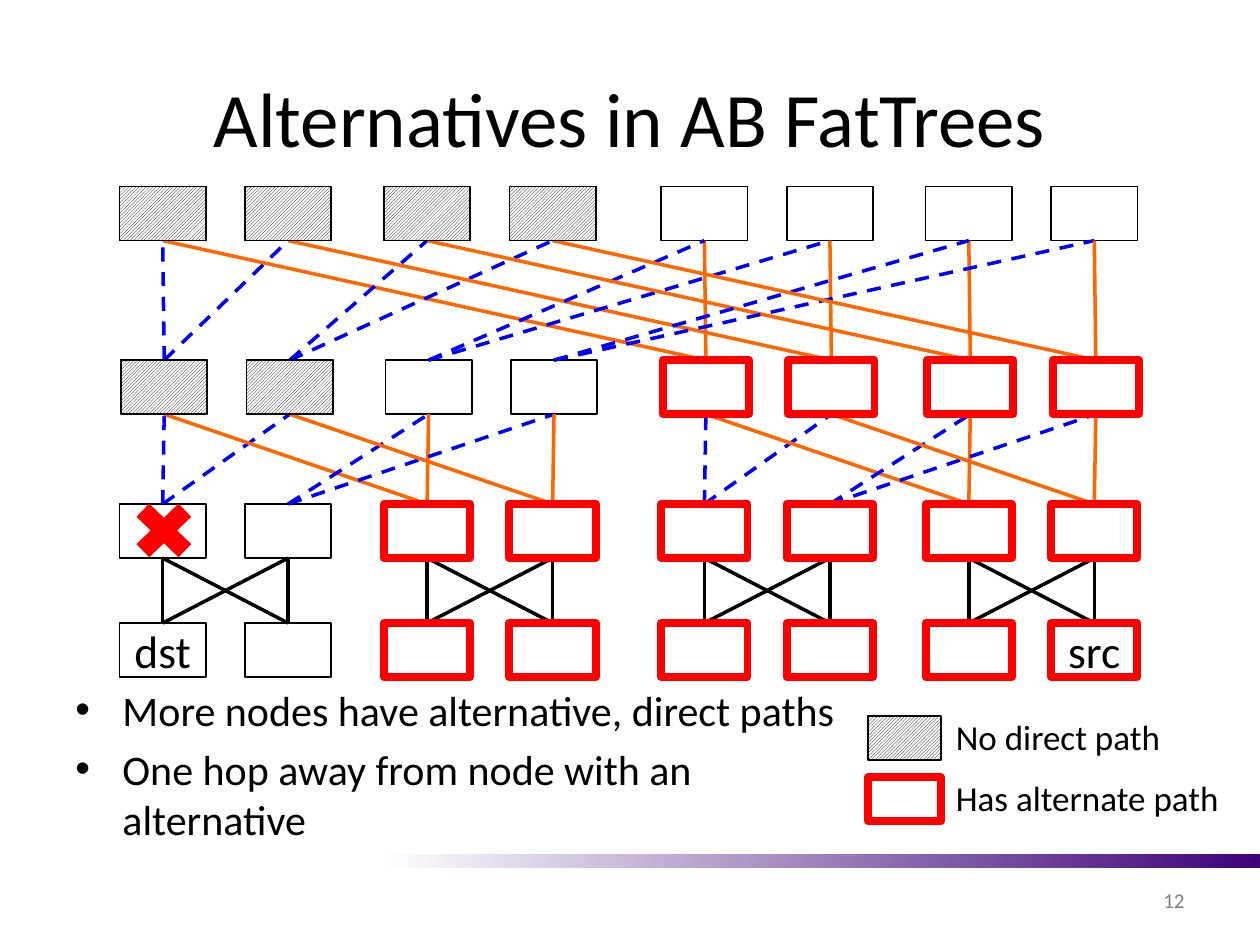
from lxml import etree
from pptx import Presentation
from pptx.dml.color import RGBColor
from pptx.enum.dml import MSO_LINE, MSO_PATTERN
from pptx.enum.shapes import MSO_CONNECTOR, MSO_SHAPE
from pptx.enum.text import MSO_ANCHOR, PP_ALIGN
from pptx.oxml.ns import qn
from pptx.util import Cm, Pt

RECTANGLE, CROSS = MSO_SHAPE.RECTANGLE, MSO_SHAPE.MATH_MULTIPLY
STRAIGHT, DASH = MSO_CONNECTOR.STRAIGHT, MSO_LINE.DASH
HATCH = MSO_PATTERN.LIGHT_UPWARD_DIAGONAL
TOP, MIDDLE = MSO_ANCHOR.TOP, MSO_ANCHOR.MIDDLE
LEFT, CENTER, RIGHT = PP_ALIGN.LEFT, PP_ALIGN.CENTER, PP_ALIGN.RIGHT
SITE_TOP, SITE_BOTTOM = 0, 2

COLORS = {name: RGBColor.from_string(value) for name, value in {
    "black": "000000", "white": "FFFFFF", "gray": "808080", "red": "FF0000",
    "blue": "0000FF", "orange": "FF6600", "purple": "3D0278"}.items()}

prs = Presentation()
prs.slide_width, prs.slide_height = Cm(25.4), Cm(19.05)
slide = prs.slides.add_slide(prs.slide_layouts[6])
shapes = slide.shapes


def write(shape, *lines, size, color="black", align=LEFT, anchor=TOP,
          wrap=True, bullet=False):
    frame = shape.text_frame
    frame.word_wrap, frame.vertical_anchor = wrap, anchor
    frame.text = "\n".join(lines)
    for paragraph in frame.paragraphs:
        paragraph.alignment = align
        font = paragraph.runs[0].font
        font.name, font.size, font.color.rgb = "Calibri", Pt(size), COLORS[color]
        if bullet:
            paragraph.space_before = Pt(size * 0.2)
            props = paragraph._p.get_or_add_pPr()
            props.set("marL", str(Cm(0.95)))
            props.set("indent", str(-Cm(0.95)))
            etree.SubElement(props, qn("a:buFont")).set("typeface", "Arial")
            etree.SubElement(props, qn("a:buChar")).set("char", "•")


def add_box(left, top, width=1.74, height=1.09, mark="plain"):
    """Draw a node outline; mark is plain, hatched or red."""
    box = shapes.add_shape(RECTANGLE, Cm(left), Cm(top), Cm(width), Cm(height))
    box.shadow.inherit = False
    if mark == "hatched":
        box.fill.patterned()
        box.fill.pattern = HATCH
        box.fill.fore_color.rgb = COLORS["black"]
        box.fill.back_color.rgb = COLORS["white"]
    else:
        box.fill.background()
    box.line.color.rgb = COLORS["red" if mark == "red" else "black"]
    box.line.width = Pt(4.5 if mark == "red" else 1)
    return box


# Footer band, title, page number and bullets
band = shapes.add_shape(RECTANGLE, Cm(4.55), Cm(17.22), Cm(20.85), Cm(0.28))
band.shadow.inherit = False
band.line.fill.background()
band.fill.gradient()
band.fill.gradient_angle = 0
for stop, position, color in zip(band.fill.gradient_stops, (0.15, 1),
                                 ("white", "purple")):
    stop.position, stop.color.rgb = position, COLORS[color]

title = shapes.add_textbox(Cm(1.27), Cm(0.76), Cm(22.86), Cm(3.18))
write(title, "Alternatives in AB FatTrees", size=44, align=CENTER, anchor=MIDDLE)
page_number = shapes.add_textbox(Cm(18.2), Cm(17.65), Cm(5.93), Cm(1.01))
write(page_number, "12", size=12, color="gray", align=RIGHT, anchor=MIDDLE)
findings = shapes.add_textbox(Cm(1.27), Cm(13.67), Cm(15.93), Cm(3.35))
write(findings, "More nodes have alternative, direct paths",
      "One hop away from node with an alternative", size=24, bullet=True)

# Four levels of eight nodes: pairs inside pods inside halves
column_lefts = [2.41 + half + pod + node
                for half in (0, 10.92) for pod in (0, 5.33) for node in (0, 2.53)]
level_origins = {"core": (0, 3.76), "aggregation": (0.03, 7.26),
                 "edge": (0, 10.16), "host": (0, 12.56)}
nodes = {level: [add_box(left + shift, top) for left in column_lefts]
         for level, (shift, top) in level_origins.items()}
for column, label in ((0, "dst"), (7, "src")):
    host = nodes["host"][column]
    write(host, label, size=26, align=CENTER, anchor=MIDDLE, wrap=False)

# Links as (lower node, upper node, colour)
links = [(nodes["host"][pair + low], nodes["edge"][pair + high], "black")
         for pair in range(0, 8, 2) for low in (0, 1) for high in (0, 1)]
for lower, upper, half in (("edge", "aggregation", 2), ("aggregation", "core", 4)):
    for start in range(0, 8, 2 * half):
        low, high = nodes[lower][start:], nodes[upper][start:]
        for i in range(half):
            links += [(low[i], high[2 * i], "blue"),
                      (low[i], high[2 * i + 1], "blue"),
                      (low[half + i], high[i], "orange"),
                      (low[half + i], high[half + i], "orange")]
for lower_node, upper_node, color in links:
    link = shapes.add_connector(STRAIGHT, 0, 0, 0, 0)
    link.begin_connect(lower_node, SITE_TOP)
    link.end_connect(upper_node, SITE_BOTTOM)
    link.line.color.rgb, link.line.width = COLORS[color], Pt(2)
    if color == "blue":
        link.line.dash_style = DASH
    etree.SubElement(link._element.spPr, qn("a:effectLst"))

# Failed node and the marks laid over the tree
failure = shapes.add_shape(CROSS, Cm(2.49), Cm(9.91), Cm(1.63), Cm(1.57))
failure.shadow.inherit = False
failure.fill.solid()
failure.fill.fore_color.rgb = COLORS["red"]
failure.line.fill.background()

for level, mark, columns in (("aggregation", "hatched", range(2)),
                             ("core", "hatched", range(4)),
                             ("aggregation", "red", range(4, 8)),
                             ("edge", "red", range(2, 8)),
                             ("host", "red", range(2, 8))):
    shift, top = level_origins[level]
    for column in columns:
        add_box(column_lefts[column] + shift, top, mark=mark)

# Legend
for top, mark, meaning, width in ((14.43, "hatched", "No direct path", 7.11),
                                  (15.67, "red", "Has alternate path", 5.89)):
    add_box(17.5, top, 1.47, 0.89, mark)
    legend_text = shapes.add_textbox(Cm(19.02), Cm(top - 0.14), Cm(width), Cm(1.11))
    write(legend_text, meaning, size=20, wrap=False)

prs.save("out.pptx")
